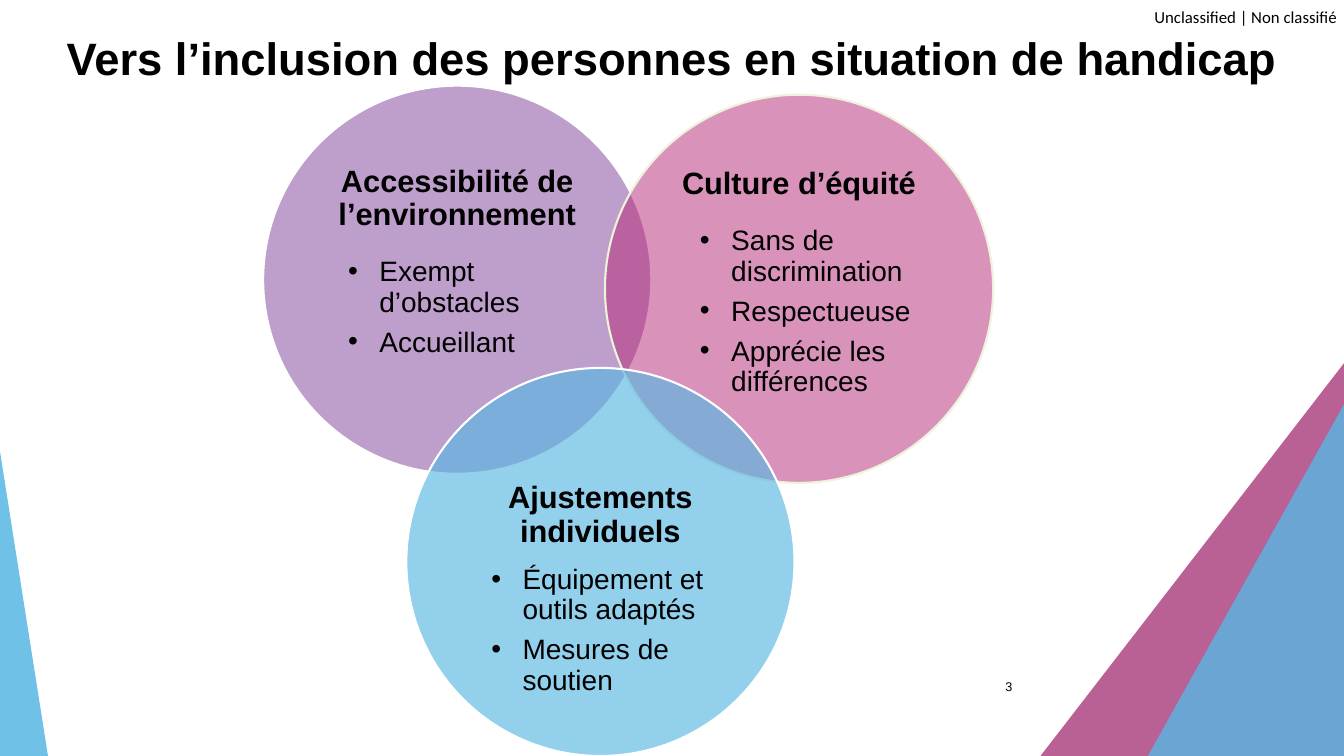
from dataclasses import dataclass

from lxml import etree
from pptx import Presentation
from pptx import util as u
from pptx.dml.color import RGBColor
from pptx.enum import shapes, text
from pptx.oxml.ns import qn


@dataclass(frozen=True)
class Theme:
    font: str = "Arial"
    label_font: str = "Calibri"
    ink: str = "000000"
    white: str = "FFFFFF"
    cream: str = "EDF3DA"
    purple: str = "7F3F98"
    pink: str = "B52775"
    plum: str = "9E246B"
    blue: str = "58B7E3"
    title_size: float = 32.4
    heading_size: float = 22
    bullet_size: float = 20
    label_size: float = 12
    number_size: float = 9


@dataclass(frozen=True)
class Triangle:
    box: tuple[float, float, float, float]
    apex: float
    color: str
    opacity: int


@dataclass(frozen=True)
class Circle:
    left: float
    top: float
    color: str
    opacity: int
    outline: str
    heading: str
    bullets: tuple[str, ...]
    bullet_indent: float = 0.49
    inset_top: float = 0.05
    inset_bottom: float = 0.05
    heading_before: float = 0
    heading_after: float = 18


THEME = Theme()
DIAMETER = 3.85
HANGING = 0.31

TRIANGLES = (
    Triangle((10.25, 3.59, 3.09, 4), 1, THEME.plum, 72),
    Triangle((11.34, 4.01, 1.99, 3.57), 1, THEME.blue, 80),
    Triangle((0, 4.48, 0.49, 3.11), 0, THEME.blue, 85),
)

CIRCLES = (
    Circle(2.61, 0.85, THEME.purple, 50, THEME.white,
           "Accessibilité de l’environnement",
           ("Exempt d’obstacles", "Accueillant"), inset_bottom=0.4),
    Circle(6, 0.94, THEME.pink, 50, THEME.cream, "Culture d’équité",
           ("Sans de discrimination", "Respectueuse", "Apprécie les différences"),
           bullet_indent=0.59, inset_top=0, inset_bottom=0.12),
    Circle(4.03, 3.65, THEME.blue, 65, THEME.white, "Ajustements individuels",
           ("Équipement et outils adaptés", "Mesures de soutien"),
           inset_top=0.59, heading_before=12, heading_after=12),
)


def place(shape, left: float, top: float, width: float, height: float) -> None:
    shape.left, shape.top = u.Inches(left), u.Inches(top)
    shape.width, shape.height = u.Inches(width), u.Inches(height)


def set_insets(frame, left: float, top: float, right: float, bottom: float) -> None:
    frame.margin_left, frame.margin_top = u.Inches(left), u.Inches(top)
    frame.margin_right, frame.margin_bottom = u.Inches(right), u.Inches(bottom)


def add_run(paragraph, words: str, size: float, bold: bool = False,
            font: str = THEME.font) -> None:
    run = paragraph.add_run()
    run.text = words
    run.font.name = font
    run.font.size = u.Pt(size)
    run.font.bold = bold
    run.font.color.rgb = RGBColor.from_string(THEME.ink)


def fill_shape(shape, color: str, opacity: int) -> None:
    shape.shadow.inherit = False
    shape.fill.solid()
    shape.fill.fore_color.rgb = RGBColor.from_string(color)
    color_element = shape.fill._xPr.find(qn("a:solidFill"))[0]
    etree.SubElement(color_element, qn("a:alpha"), val=str(opacity * 1000))


def make_bullet(paragraph, indent: float) -> None:
    properties = paragraph._p.get_or_add_pPr()
    properties.set("marL", str(u.Inches(indent)))
    properties.set("indent", str(u.Inches(-HANGING)))
    etree.SubElement(properties, qn("a:buFont"), typeface=THEME.font)
    etree.SubElement(properties, qn("a:buChar"), char="•")


def add_triangle(slide, triangle: Triangle) -> None:
    shape = slide.shapes.add_shape(
        shapes.MSO_SHAPE.ISOSCELES_TRIANGLE, *map(u.Inches, triangle.box))
    shape.adjustments[0] = triangle.apex
    fill_shape(shape, triangle.color, triangle.opacity)
    shape.line.fill.background()


def add_circle(slide, circle: Circle) -> None:
    shape = slide.shapes.add_shape(
        shapes.MSO_SHAPE.OVAL, u.Inches(circle.left), u.Inches(circle.top),
        u.Inches(DIAMETER), u.Inches(DIAMETER))
    fill_shape(shape, circle.color, circle.opacity)
    shape.line.color.rgb = RGBColor.from_string(circle.outline)
    shape.line.width = u.Pt(1.5)

    frame = shape.text_frame
    frame.word_wrap = True
    frame.vertical_anchor = text.MSO_ANCHOR.MIDDLE
    set_insets(frame, 0.1, circle.inset_top, 0.1, circle.inset_bottom)

    heading = frame.paragraphs[0]
    heading.alignment = text.PP_ALIGN.CENTER
    heading.line_spacing = 0.9
    heading.space_before = u.Pt(circle.heading_before)
    heading.space_after = u.Pt(circle.heading_after)
    add_run(heading, circle.heading, THEME.heading_size, bold=True)

    for words in circle.bullets:
        paragraph = frame.add_paragraph()
        paragraph.alignment = text.PP_ALIGN.LEFT
        paragraph.line_spacing = 0.9
        paragraph.space_after = u.Pt(7)
        make_bullet(paragraph, circle.bullet_indent)
        add_run(paragraph, words, THEME.bullet_size)


def add_title(slide, words: str) -> None:
    title = slide.shapes.title
    place(title, 0.56, 0.25, 12.64, 0.88)
    frame = title.text_frame
    frame.word_wrap = True
    frame.auto_size = text.MSO_AUTO_SIZE.NONE
    frame.vertical_anchor = text.MSO_ANCHOR.TOP
    paragraph = frame.paragraphs[0]
    paragraph.alignment = text.PP_ALIGN.LEFT
    add_run(paragraph, words, THEME.title_size, bold=True)


def add_classification(slide) -> None:
    label = slide.shapes.add_textbox(
        u.Inches(11.45), u.Inches(0.07), u.Inches(1.86), u.Inches(0.2))
    frame = label.text_frame
    frame.word_wrap = False
    set_insets(frame, 0, 0, 0, 0)
    add_run(frame.paragraphs[0], "Unclassified | Non classifié",
            THEME.label_size, font=THEME.label_font)


def add_page_number(slide) -> None:
    number = slide.shapes.add_textbox(
        u.Inches(9.39), u.Inches(6.61), u.Inches(0.75), u.Inches(0.4))
    frame = number.text_frame
    frame.word_wrap = True
    frame.vertical_anchor = text.MSO_ANCHOR.MIDDLE
    paragraph = frame.paragraphs[0]
    paragraph.alignment = text.PP_ALIGN.RIGHT
    paragraph.space_after = u.Pt(6)
    add_run(paragraph, "3", THEME.number_size)


def main() -> None:
    presentation = Presentation()
    presentation.slide_width = u.Inches(13.33)
    presentation.slide_height = u.Inches(7.5)
    slide = presentation.slides.add_slide(presentation.slide_layouts[5])

    # Corner decoration
    for triangle in TRIANGLES:
        add_triangle(slide, triangle)

    # Title, classification and page number
    add_classification(slide)
    add_title(slide, "Vers l’inclusion des personnes en situation de handicap")
    add_page_number(slide)

    # Overlapping circles
    for circle in CIRCLES:
        add_circle(slide, circle)

    presentation.save("out.pptx")


if __name__ == "__main__":
    main()
